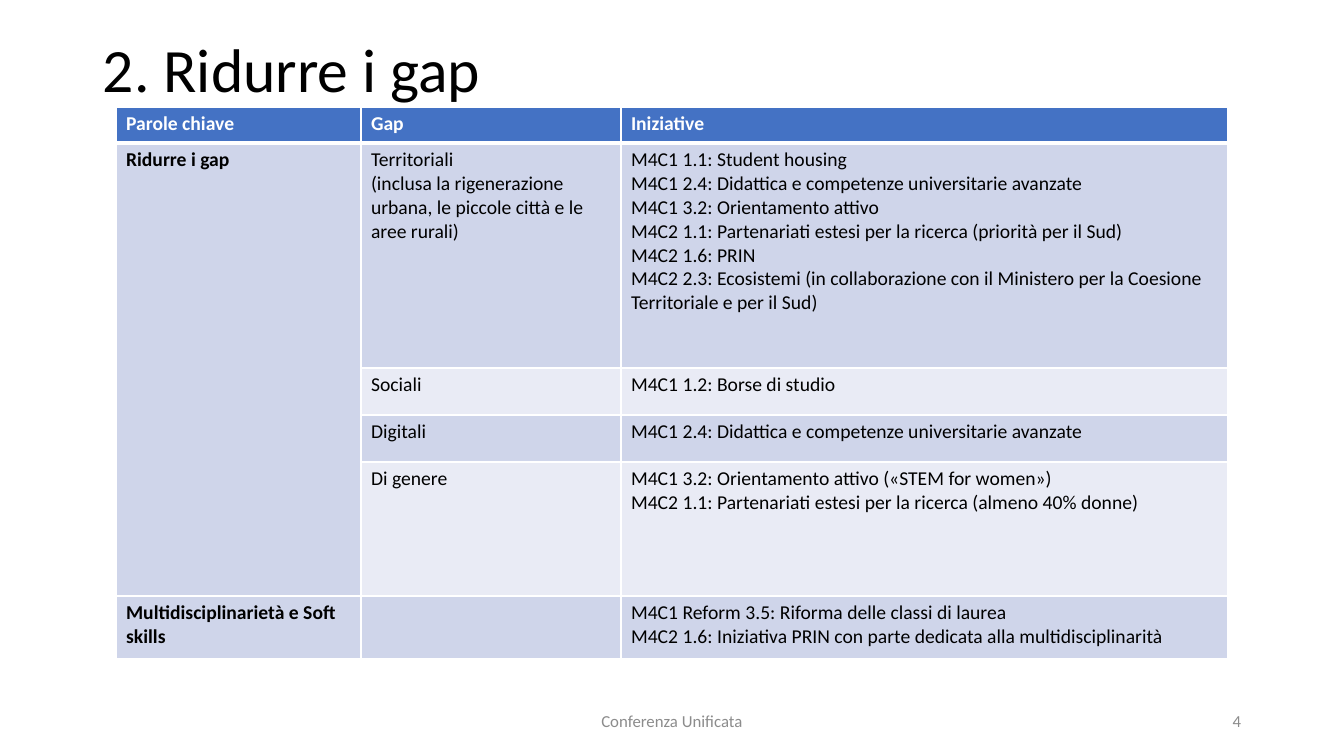
from dataclasses import dataclass

from lxml import etree
from pptx import Presentation
from pptx.dml.color import RGBColor
from pptx.enum.text import MSO_ANCHOR, PP_ALIGN
from pptx.oxml.ns import qn
from pptx.util import Emu, Pt

LEFT, CENTER, RIGHT = PP_ALIGN.LEFT, PP_ALIGN.CENTER, PP_ALIGN.RIGHT
MIDDLE = MSO_ANCHOR.MIDDLE
EMU_PER_PX = 914400 / 100.8


@dataclass(frozen=True)
class Theme:
    font: str = "Calibri"
    text: str = "000000"
    white: str = "FFFFFF"
    muted: str = "8C8C8C"
    header: str = "4472C4"
    bands: tuple = ("CFD5EA", "E9EBF5")
    title_size: int = 44
    table_size: int = 14
    footer_size: int = 12
    border: int = 1
    header_border: int = 3


def px(n):
    return Emu(round(n * EMU_PER_PX))


class Deck:
    def __init__(self, theme, width, height):
        self.theme = theme
        self.prs = Presentation()
        self.prs.slide_width, self.prs.slide_height = px(width), px(height)
        self.slide = self.prs.slides.add_slide(self.prs.slide_layouts[6])

    def style(self, tf, size, color, bold=False, align=LEFT):
        for p in tf.paragraphs:
            p.alignment = align
            for r in p.runs:
                r.font.name = self.theme.font
                r.font.size = Pt(size)
                r.font.bold = bold
                r.font.color.rgb = RGBColor.from_string(color)

    def text(self, text, x, y, w, h, size, color, align=LEFT, line_spacing=None):
        tf = self.slide.shapes.add_textbox(px(x), px(y), px(w), px(h)).text_frame
        tf.word_wrap = True
        tf.vertical_anchor = MIDDLE
        tf.text = text
        tf.paragraphs[0].line_spacing = line_spacing
        self.style(tf, size, color, align=align)

    def borders(self, cell, bottom):
        tc_pr = cell._tc.get_or_add_tcPr()
        for i, side in enumerate("LRTB"):
            width = bottom if side == "B" else self.theme.border
            ln = etree.Element(qn(f"a:ln{side}"), w=str(Pt(width)))
            fill = etree.SubElement(ln, qn("a:solidFill"))
            etree.SubElement(fill, qn("a:srgbClr"), val=self.theme.white)
            tc_pr.insert(i, ln)

    def table(self, rows, x, y, widths, heights):
        t = self.theme
        table = self.slide.shapes.add_table(
            len(rows), len(widths), px(x), px(y), px(sum(widths)), px(sum(heights))
        ).table
        for column, width in zip(table.columns, widths):
            column.width = px(width)
        for i, (row, height) in enumerate(zip(rows, heights)):
            table.rows[i].height = px(height)
            is_header = i == 0
            for j, text in enumerate(row):
                cell = table.cell(i, j)
                cell.text = text
                cell.fill.solid()
                fill = t.header if is_header else t.bands[(i - 1) % 2]
                cell.fill.fore_color.rgb = RGBColor.from_string(fill)
                self.borders(cell, t.header_border if is_header else t.border)
                self.style(cell.text_frame, t.table_size,
                           t.white if is_header else t.text,
                           bold=is_header or j == 0)
        return table


ROWS = [
    ("Parole chiave", "Gap", "Iniziative"),
    ("Ridurre i gap",
     "Territoriali\n"
     "(inclusa la rigenerazione urbana, le piccole città e le aree rurali)",
     "M4C1 1.1: Student housing\n"
     "M4C1 2.4: Didattica e competenze universitarie avanzate\n"
     "M4C1 3.2: Orientamento attivo\n"
     "M4C2 1.1: Partenariati estesi per la ricerca (priorità per il Sud)\n"
     "M4C2 1.6: PRIN\n"
     "M4C2 2.3: Ecosistemi (in collaborazione con il Ministero per la Coesione "
     "Territoriale e per il Sud)"),
    ("", "Sociali", "M4C1 1.2: Borse di studio"),
    ("", "Digitali", "M4C1 2.4: Didattica e competenze universitarie avanzate"),
    ("", "Di genere",
     "M4C1 3.2: Orientamento attivo («STEM for women»)\n"
     "M4C2 1.1: Partenariati estesi per la ricerca (almeno 40% donne)"),
    ("Multidisciplinarietà e Soft skills", "",
     "M4C1 Reform 3.5: Riforma delle classi di laurea\n"
     "M4C2 1.6: Iniziativa PRIN con parte dedicata alla multidisciplinarità"),
]


def main():
    theme = Theme()
    deck = Deck(theme, 1344, 756)

    # Title
    deck.text("2. Ridurre i gap", 93, 0, 1159, 146, theme.title_size, theme.text,
              line_spacing=0.9)

    # Table of gaps and initiatives; the first keyword spans its four gaps
    table = deck.table(ROWS, 116, 107, (245, 260, 607), (36, 225, 47, 47, 134, 63))
    table.cell(1, 0).merge(table.cell(4, 0))

    # Footer and page number
    deck.text("Conferenza Unificata", 445, 701, 454, 40, theme.footer_size,
              theme.muted, CENTER)
    deck.text("4", 949, 701, 302, 40, theme.footer_size, theme.muted, RIGHT)

    deck.prs.save("out.pptx")


if __name__ == "__main__":
    main()
